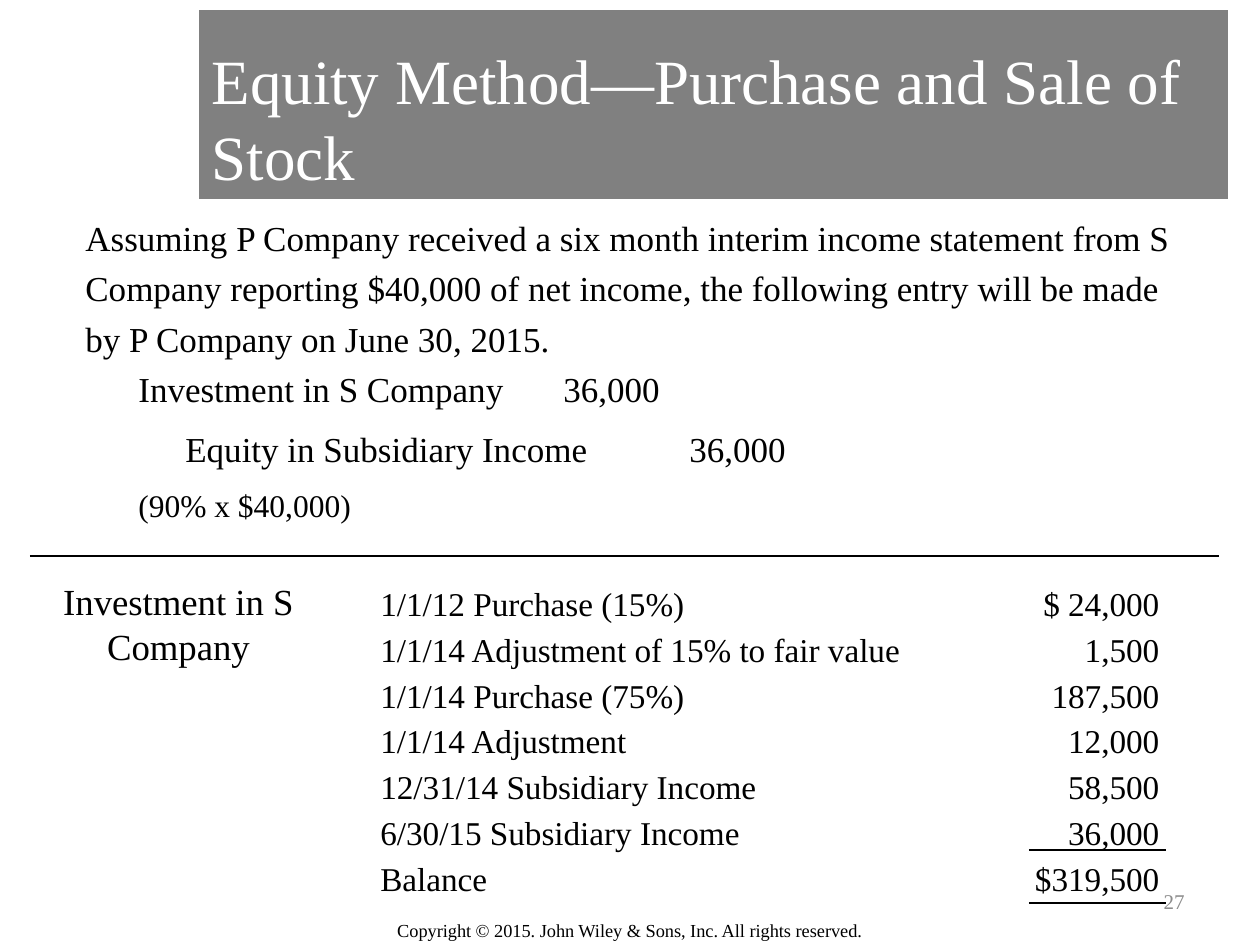
from lxml.etree import SubElement
from pptx import Presentation
from pptx.dml.color import RGBColor
from pptx.enum.shapes import MSO_CONNECTOR
from pptx.enum.text import MSO_ANCHOR, MSO_AUTO_SIZE, PP_ALIGN
from pptx.oxml.ns import qn
from pptx.util import Pt

SCALE = 914400 / 126
FONT = "Times New Roman"


def px(*nums):
    """Turn px lengths into EMU."""
    return [round(n * SCALE) for n in nums]


def write(box, lines, color="000000", align=PP_ALIGN.LEFT, gap=1, anchor=MSO_ANCHOR.TOP):
    """Fill a box with (text, size) lines and return its paragraphs."""
    frame = box.text_frame
    frame.word_wrap = True
    frame.auto_size = MSO_AUTO_SIZE.NONE
    frame.vertical_anchor = anchor
    for i, (text, size) in enumerate(lines):
        para = frame.add_paragraph() if i else frame.paragraphs[0]
        para.alignment = align
        para.line_spacing = gap
        run = para.add_run()
        run.text = text
        run.font.name = FONT
        run.font.size = Pt(size)
        run.font.color.rgb = RGBColor.from_string(color)
    return frame.paragraphs


deck = Presentation()
deck.slide_width, deck.slide_height = px(1260, 945)
slide = deck.slides.add_slide(deck.slide_layouts[5])
shapes = slide.shapes

# Title band
title = shapes.title
title.left, title.top, title.width, title.height = px(199, 10, 1029, 189)
title.fill.solid()
title.fill.fore_color.rgb = RGBColor.from_string("808080")
write(title, [("Equity Method—Purchase and Sale of Stock", 36)], "FFFFFF",
      anchor=MSO_ANCHOR.BOTTOM)

# Introduction
intro = shapes.add_textbox(*px(73, 202, 1124, 165))
write(intro, [("Assuming P Company received a six month interim income statement "
               "from S Company reporting $40,000 of net income, the following entry "
               "will be made by P Company on June 30, 2015.", 20)], gap=1.2)

# Journal entry, on the default one-inch tabs
entry = shapes.add_textbox(*px(126, 357, 1018, 179))
paras = write(entry, [
    ("Investment in S Company \t36,000", 20),
    ("\tEquity in Subsidiary Income \t\t36,000", 20),
    ("(90% x $40,000)", 18),
], gap=1.1)
for para, space in zip(paras, (0, 8, 7)):
    para.space_before = Pt(space)
    props = para._p.get_or_add_pPr()
    indent = px(47)[0]
    props.set("marL", str(indent))
    props.set("indent", str(-indent))

# Account history, amounts on a right tab
label = shapes.add_textbox(*px(42, 573, 273, 101))
write(label, [("Investment in S Company", 21)], align=PP_ALIGN.CENTER)

history = [
    ("1/1/12 Purchase (15%)", "$ 24,000"),
    ("1/1/14 Adjustment of 15% to fair value", "1,500"),
    ("1/1/14 Purchase (75%)", "187,500"),
    ("1/1/14 Adjustment", "12,000"),
    ("12/31/14 Subsidiary Income", "58,500"),
    ("6/30/15 Subsidiary Income", "36,000"),
    ("Balance", "$319,500"),
]
ledger = shapes.add_textbox(*px(368, 571, 840, 338))
paras = write(ledger, [(f"{item} \t{sum_}", 19) for item, sum_ in history], gap=1.15)
for para in paras:
    tabs = SubElement(para._p.get_or_add_pPr(), qn("a:tabLst"))
    SubElement(tabs, qn("a:tab"), pos=str(px(779)[0]), algn="r")

# Divider and the rules around the balance
for left, right, y in [(30, 1219, 556), (1029, 1166, 850), (1029, 1166, 903)]:
    rule = shapes.add_connector(MSO_CONNECTOR.STRAIGHT, *px(left, y, right, y))
    rule.line.color.rgb = RGBColor.from_string("000000")
    rule.line.width = Pt(1.5)
    SubElement(rule._element.spPr, qn("a:effectLst"))

# Footer
credit = shapes.add_textbox(*px(0, 913, 1260, 37))
write(credit, [("Copyright © 2015. John Wiley & Sons, Inc. All rights reserved.", 10.5)],
      align=PP_ALIGN.CENTER)
number = shapes.add_textbox(*px(903, 876, 294, 50))
write(number, [("27", 12)], "8C8C8C", PP_ALIGN.RIGHT, anchor=MSO_ANCHOR.MIDDLE)

deck.save("out.pptx")
